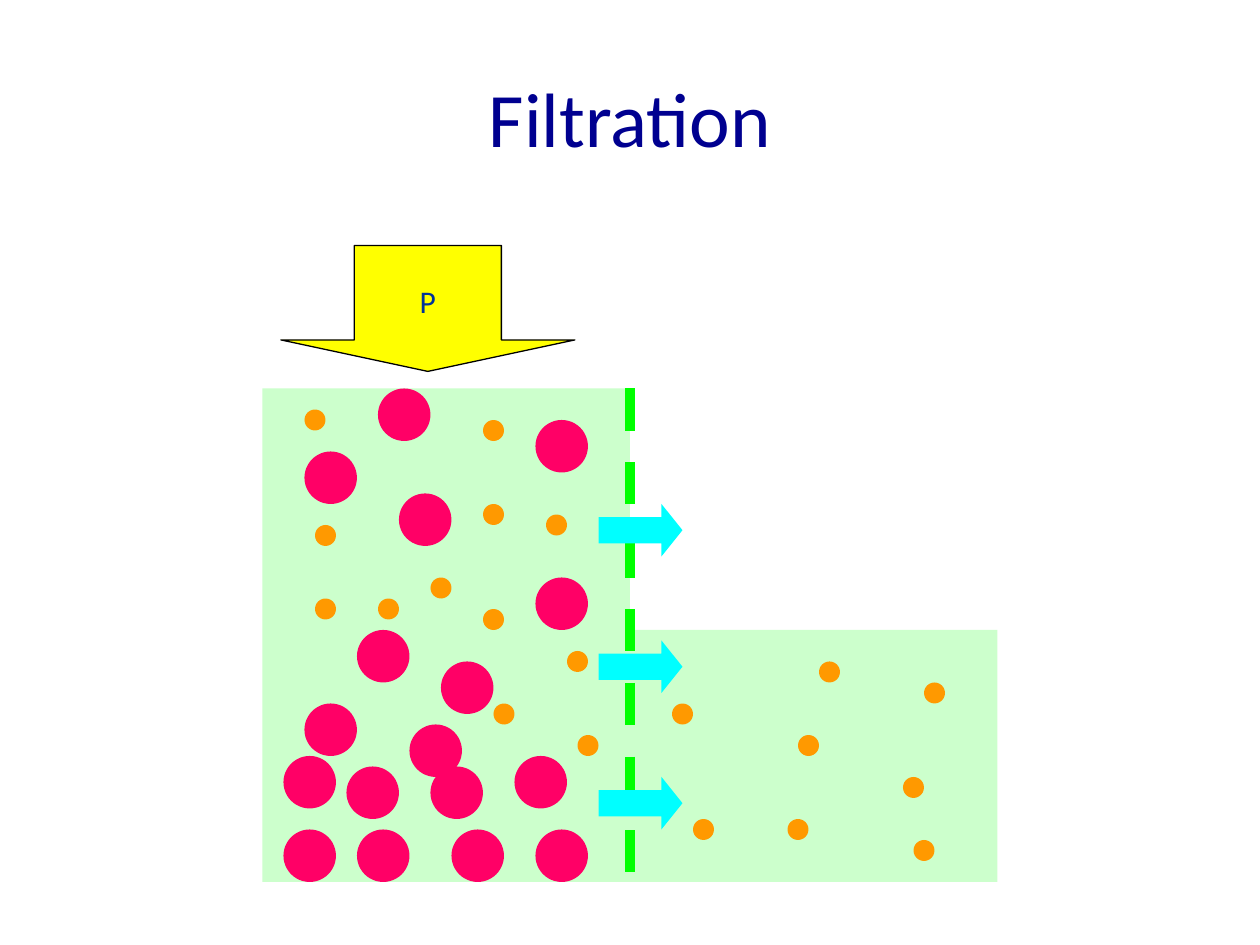
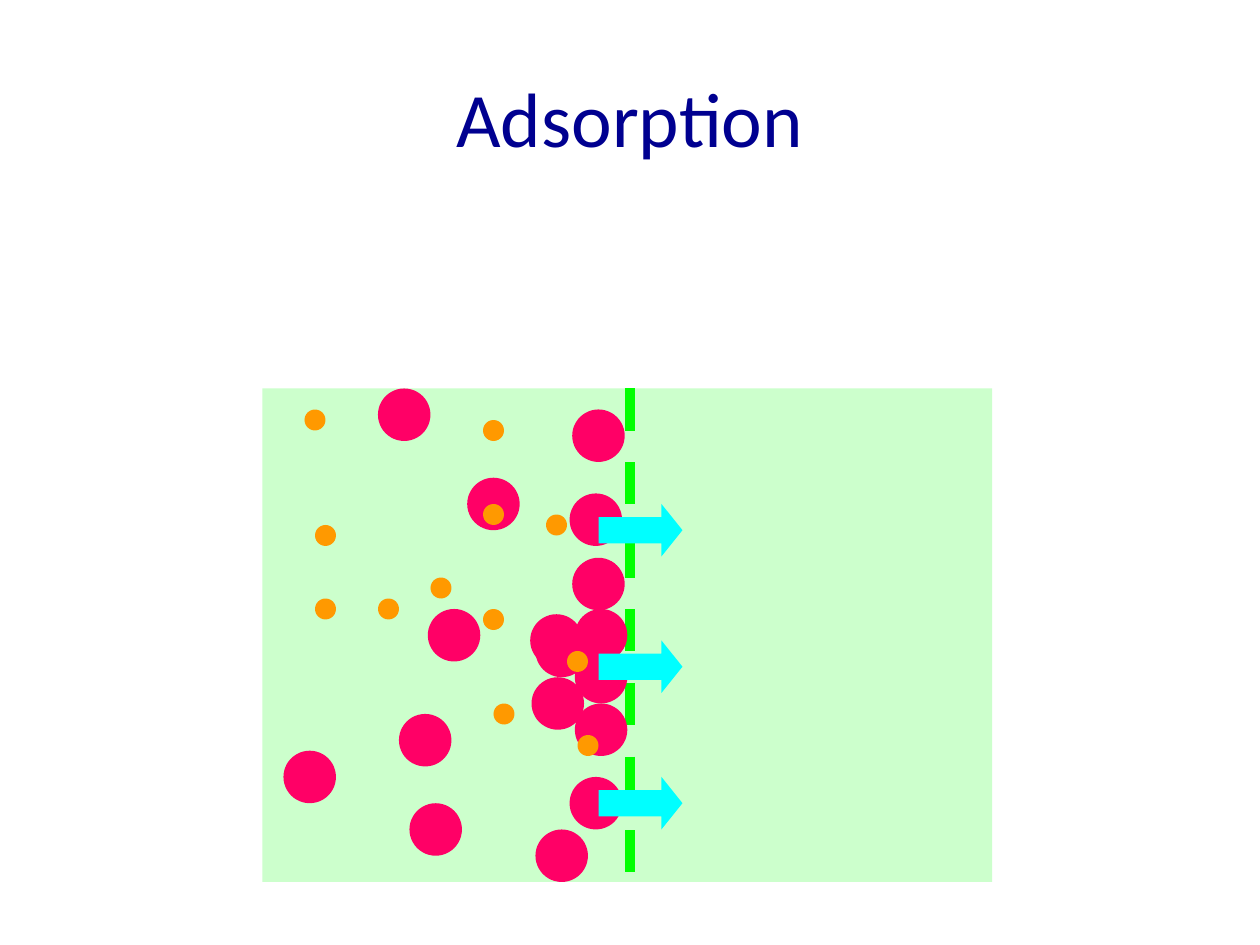
from lxml.etree import SubElement
from pptx import Presentation
from pptx.dml.color import RGBColor
from pptx.enum.dml import MSO_LINE
from pptx.enum.shapes import MSO_CONNECTOR, MSO_SHAPE
from pptx.enum.text import MSO_ANCHOR, PP_ALIGN
from pptx.oxml.ns import qn
from pptx.util import Pt

PX = 9525  # 96 px to the inch
NAVY, BLUE, BLACK = "000090", "003399", "000000"
FLUID, MEMBRANE, PRESSURE = "CCFFCC", "00FF00", "FFFF00"
LARGE, SMALL, FLOW = "FF0066", "FF9900", "00FFFF"


def add_filled(slide, kind, box, color):
    """Add a borderless preset shape; box is left, top, width, height in px."""
    shape = slide.shapes.add_shape(kind, *[n * PX for n in box])
    shape.shadow.inherit = False
    shape.fill.solid()
    shape.fill.fore_color.rgb = RGBColor.from_string(color)
    shape.line.fill.background()
    return shape


def write_centred(shape, text, size, color, wrap):
    frame = shape.text_frame
    frame.word_wrap = wrap
    frame.vertical_anchor = MSO_ANCHOR.MIDDLE
    paragraph = frame.paragraphs[0]
    paragraph.alignment = PP_ALIGN.CENTER
    run = paragraph.add_run()
    run.text = text
    for key, value in {"name": "Calibri", "size": Pt(size)}.items():
        setattr(run.font, key, value)
    run.font.color.rgb = RGBColor.from_string(color)


# Left and top of every particle, in px
retained_small = [
    (240, 400), (416, 392), (368, 320), (240, 456), (288, 456), (368, 464),
    (376, 536), (432, 496), (440, 560), (328, 440), (368, 384), (232, 312),
]
filtered_small = [
    (512, 536), (624, 504), (608, 560), (528, 624),
    (600, 624), (688, 592), (696, 640), (704, 520),
]
settled_large = [
    (232, 344), (408, 320), (272, 480), (216, 632), (304, 376), (288, 296),
    (328, 584), (408, 632), (344, 632), (264, 584), (232, 536), (272, 632),
    (408, 440), (336, 504), (216, 576), (312, 552), (392, 576),
]
adsorbed_large = [
    (438, 496), (436, 312), (408, 476), (216, 572), (436, 425), (288, 296),
    (434, 592), (438, 536), (408, 632), (326, 464), (356, 364), (312, 612),
    (434, 376), (438, 464), (304, 544), (404, 468), (405, 516),
]

processes = [
    {"title": "Filtration", "receiver": (480, 480, 280, 192), "pressure": "P",
     "large": settled_large, "small": retained_small + filtered_small},
    {"title": "Adsorption", "receiver": (476, 296, 280, 376), "pressure": None,
     "large": adsorbed_large, "small": retained_small},
]

prs = Presentation()
prs.slide_width, prs.slide_height = 960 * PX, 720 * PX

for process in processes:
    slide = prs.slides.add_slide(prs.slide_layouts[6])
    title = slide.shapes.add_textbox(48 * PX, 29 * PX, 864 * PX, 120 * PX)
    write_centred(title, process["title"], 44, NAVY, True)

    for compartment in [(200, 296, 280, 376), process["receiver"]]:
        add_filled(slide, MSO_SHAPE.RECTANGLE, compartment, FLUID)

    membrane = slide.shapes.add_connector(
        MSO_CONNECTOR.STRAIGHT, 480 * PX, 296 * PX, 480 * PX, 680 * PX)
    membrane.line.color.rgb = RGBColor.from_string(MEMBRANE)
    membrane.line.width = Pt(6)
    membrane.line.dash_style = MSO_LINE.DASH
    SubElement(membrane.element.spPr, qn("a:effectLst"))

    if process["pressure"]:
        pressure = add_filled(slide, MSO_SHAPE.DOWN_ARROW, (214, 187, 224, 96), PRESSURE)
        pressure.adjustments[0], pressure.adjustments[1] = 0.5, 0.25
        pressure.line.color.rgb = RGBColor.from_string(BLACK)
        pressure.line.width = Pt(0.75)
        write_centred(pressure, process["pressure"], 18, BLUE, False)

    for size, diameter, color in [("large", 40, LARGE), ("small", 16, SMALL)]:
        for left, top in process[size]:
            add_filled(slide, MSO_SHAPE.OVAL, (left, top, diameter, diameter), color)

    for row in range(3):
        flow = add_filled(slide, MSO_SHAPE.RIGHT_ARROW, (456, 384 + 104 * row, 64, 40), FLOW)
        flow.adjustments[0], flow.adjustments[1] = 0.5, 0.4

prs.save("out.pptx")
